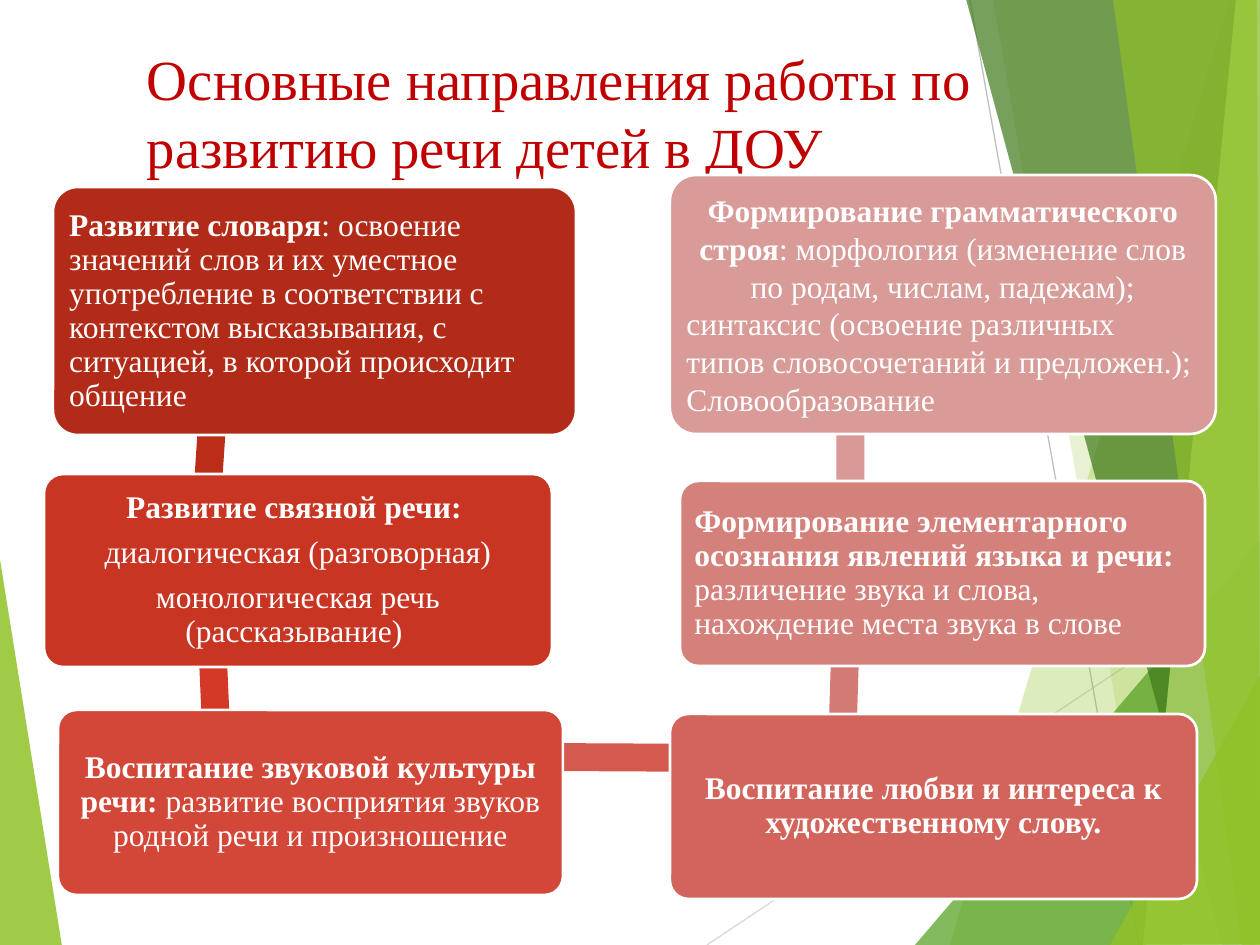
import pptx
import pptx.util
import pptx.dml.color
import pptx.enum.shapes
import pptx.enum.text
from lxml import etree
from pptx.oxml.ns import qn

PX = 914400 // 126
W, H = 1260, 945
FONT = "Times New Roman"
SHAPE = pptx.enum.shapes.MSO_SHAPE
ALIGN = pptx.enum.text.PP_ALIGN
ANCHOR = pptx.enum.text.MSO_ANCHOR
L, C = ALIGN.LEFT, ALIGN.CENTER

# Backdrop: colour, opacity in percent, corner points
LEFT_WEDGE = ("90C226", 85, [(-1, 553), (62, 946), (-1, 945)])
RIGHT_FACETS = [
    ("90C226", 30, [(1229, 0), (950, 945), (1263, 946), (1261, 1)]),
    ("90C226", 20, [(993, -1), (1158, 945), (1261, 945), (1261, -1)]),
    ("54A021", 72, [(915, 945), (1260, 541), (1261, 945)]),
    ("3F7819", 70, [(966, -1), (1222, 945), (1261, 944), (1261, -1)]),
    ("C0E474", 70, [(1236, -1), (1143, 945), (1261, 945), (1260, -1)]),
    ("90C226", 65, [(1113, -1), (1242, 945), (1260, 945), (1257, -1)]),
    ("90C226", 80, [(1110, 945), (1261, 674), (1261, 944)]),
]
BACK_LINES = [("D9D9D9", (707, 945, 1261, 576)), ("BFBFBF", (970, 0, 1139, 945))]

# Links between cards: left, top, length, rotation, colour
LINKS = [
    (85, 379, 258, 93.8, "BB2D19"),
    (96, 625, 232, 87.5, "D43927"),
    (219, 743, 621, 0.3, "D4594E"),
    (729, 629, 233, 271.8, "D47A74"),
    (717, 378, 267, 270, "D89A97"),
]

# Cards: box, colour, line spacing, space after, paragraphs (align, bold, plain)
CARDS = [
    ((53, 187, 523, 248), "B22B18", 0.9, 6.3, [
        (L, "Развитие словаря", ": освоение значений слов и их уместное употребление "
         "в соответствии с контекстом высказывания, с ситуацией, в которой происходит "
         "общение")]),
    ((44, 474, 508, 193), "C83523", 0.9, 6.3, [
        (C, "Развитие связной речи: ", ""),
        (C, "", "диалогическая (разговорная)"),
        (C, "", "монологическая речь (рассказывание) ")]),
    ((58, 710, 505, 185), "D34739", 0.9, 6.3, [
        (C, "Воспитание звуковой культуры речи: ",
         "развитие восприятия звуков родной речи и произношение")]),
    ((670, 714, 527, 185), "D3645B", 0.9, 6.3, [
        (C, "Воспитание любви и интереса к художественному слову.", "")]),
    ((680, 481, 525, 185), "D4807B", 0.9, 6.3, [
        (L, "Формирование элементарного осознания явлений языка и речи:",
         " различение звука и слова, нахождение места звука в слове")]),
    ((670, 175, 546, 259), "D89B98", 1.0, 0, [
        (C, "Формирование грамматического строя",
         ": морфология (изменение слов по родам, числам, падежам);"),
        (L, "", "синтаксис (освоение различных типов словосочетаний и предложен.);"),
        (L, "", "Словообразование")]),
]


def px(n):
    return pptx.util.Emu(round(n * PX))


def rgb(code):
    return pptx.dml.color.RGBColor.from_string(code)


def paint(sp, color, opacity=100):
    sp.shadow.inherit = False
    sp.fill.solid()
    sp.fill.fore_color.rgb = rgb(color)
    sp.line.fill.background()
    if opacity < 100:
        clr = sp.element.spPr.find(qn("a:solidFill"))[0]
        etree.SubElement(clr, qn("a:alpha")).set("val", str(opacity * 1000))


def style(font, size, color, bold=False):
    font.name = FONT
    font.size = pptx.util.Pt(size)
    font.bold = bold
    font.color.rgb = rgb(color)


def set_insets(tf, across, down):
    tf.margin_left = tf.margin_right = px(across)
    tf.margin_top = tf.margin_bottom = px(down)
    tf.word_wrap = True


def add_facet(s, color, opacity, points):
    fb = s.shapes.build_freeform(*points[0], scale=PX)
    fb.add_line_segments(points[1:], close=True)
    paint(fb.convert_to_shape(), color, opacity)


def add_line(s, color, ends):
    cn = s.shapes.add_connector(pptx.enum.shapes.MSO_CONNECTOR.STRAIGHT, *map(px, ends))
    cn.line.color.rgb = rgb(color)
    cn.line.width = pptx.util.Pt(0.75)
    etree.SubElement(cn.element.spPr, qn("a:effectLst"))


def add_title(s, text):
    sp = s.shapes.title
    # Bring the title in front of the backdrop
    s.shapes.element.append(sp.element)
    sp.left, sp.top, sp.width, sp.height = map(px, (134, 38, 1063, 127))
    tf = sp.text_frame
    tf.text = text
    tf.auto_size = pptx.enum.text.MSO_AUTO_SIZE.NONE
    tf.vertical_anchor = ANCHOR.TOP
    set_insets(tf, 13, 6)
    p = tf.paragraphs[0]
    p.alignment = L
    for r in p.runs:
        style(r.font, 32.4, "C00000")


def add_link(s, left, top, length, rotation, color):
    sp = s.shapes.add_shape(SHAPE.RECTANGLE, *map(px, (left, top, length, 28)))
    sp.rotation = rotation
    paint(sp, color)


def add_card(s, box, color, spacing, after, paragraphs):
    sp = s.shapes.add_shape(SHAPE.ROUNDED_RECTANGLE, *map(px, box))
    sp.adjustments[0] = 0.1
    paint(sp, color)
    sp.line.color.rgb = rgb("FFFFFF")
    sp.line.width = pptx.util.Pt(1.5)
    tf = sp.text_frame
    tf.vertical_anchor = ANCHOR.MIDDLE
    set_insets(tf, 9, 9)
    for i, (align, bold, plain) in enumerate(paragraphs):
        p = tf.add_paragraph() if i else tf.paragraphs[0]
        p.alignment = align
        p.line_spacing = spacing
        p.space_after = pptx.util.Pt(after)
        for text, is_bold in ((bold, True), (plain, False)):
            if text:
                r = p.add_run()
                r.text = text
                style(r.font, 18, "FFFFFF", is_bold)


def main():
    prs = pptx.Presentation()
    prs.slide_width, prs.slide_height = px(W), px(H)
    s = prs.slides.add_slide(prs.slide_layouts[5])

    # Backdrop
    add_facet(s, *LEFT_WEDGE)
    for line in BACK_LINES:
        add_line(s, *line)
    for facet in RIGHT_FACETS:
        add_facet(s, *facet)

    # Title
    add_title(s, "Основные направления работы по \vразвитию речи детей в ДОУ")

    # Chain of cards
    for link in LINKS:
        add_link(s, *link)
    for card in CARDS:
        add_card(s, *card)

    prs.save("out.pptx")


if __name__ == "__main__":
    main()
